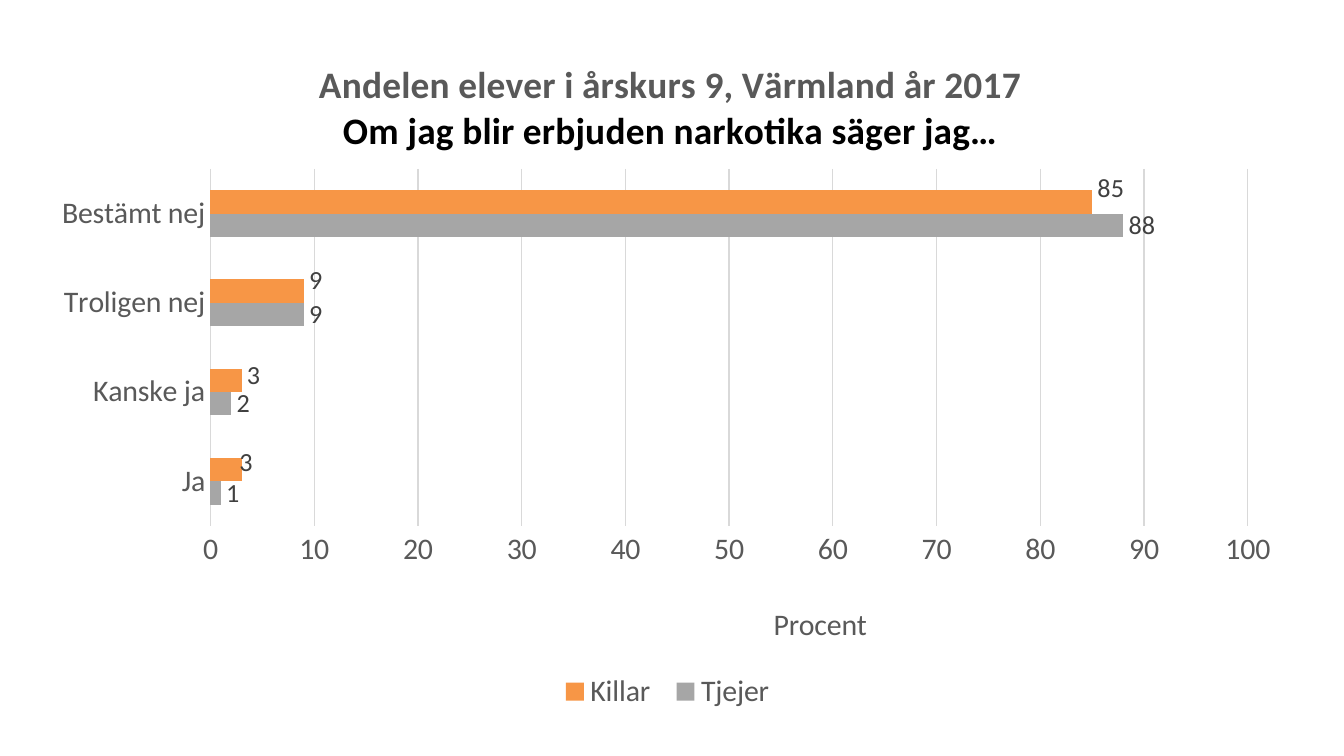
from lxml.etree import SubElement
from pptx import Presentation
from pptx.chart.data import CategoryChartData
from pptx.dml.color import RGBColor
from pptx.enum.chart import XL_CHART_TYPE, XL_LABEL_POSITION, XL_LEGEND_POSITION, XL_TICK_MARK
from pptx.oxml.ns import qn
from pptx.util import Emu, Pt

SCALE = 914400 / 134.4
FRAME = (38, 28, 1259, 688)
CATS = ["Ja", "Kanske ja", "Troligen nej", "Bestämt nej"]
ROWS = [("Tjejer", [1, 2, 9, 88], "A6A6A6"), ("Killar ", [3, 3, 9, 85], "F79646")]
SHIFTS = [(-8, -7), (0, -5), (0, -10), (0, -13)]
GREY, RULE, DARK = "595959", "D9D9D9", "404040"


def px(n):
    return Emu(round(n * SCALE))


def tint(code):
    return RGBColor.from_string(code)


def apply(item, values):
    for key, value in values.items():
        setattr(item, key, value)


def style(font, size, code, bold=False):
    apply(font, {"name": "Calibri", "size": Pt(size), "bold": bold})
    font.color.rgb = tint(code)


def rule(line):
    line.width = Pt(0.75)
    line.color.rgb = tint(RULE)


def place(node, index, **values):
    for old in node.findall(qn("c:layout")):
        node.remove(old)
    layout = SubElement(node, qn("c:layout"))
    node.insert(index, layout)
    manual = SubElement(layout, qn("c:manualLayout"))
    for key, value in values.items():
        SubElement(manual, qn("c:" + key)).set("val", str(value))


def write(title, lines, size, bold, x, y):
    frame = title.text_frame
    for i, (text, code) in enumerate(lines):
        para = frame.add_paragraph() if i else frame.paragraphs[0]
        run = para.add_run()
        run.text = text
        style(run.font, size, code, bold)
    place(title._element, 1, xMode="edge", yMode="edge", x=x, y=y)


def add_chart(slide):
    data = CategoryChartData(number_format="0")
    data.categories = CATS
    for name, vals, code in ROWS:
        data.add_series(name, vals)
    chart = slide.shapes.add_chart(
        XL_CHART_TYPE.BAR_CLUSTERED, *map(px, FRAME), data).chart
    style(chart.font, 12, "000000")
    return chart


def set_axes(chart):
    cat, val = chart.category_axis, chart.value_axis
    for axis in (cat, val):
        apply(axis, {"major_tick_mark": XL_TICK_MARK.NONE,
                     "minor_tick_mark": XL_TICK_MARK.NONE})
        style(axis.tick_labels.font, 16, GREY)
    apply(cat, {"has_major_gridlines": False})
    apply(val, {"minimum_scale": 0, "maximum_scale": 100, "major_unit": 10,
                "has_major_gridlines": True})
    apply(val.tick_labels, {"number_format": "0", "number_format_is_linked": False})
    rule(cat.format.line)
    rule(val.major_gridlines.format.line)
    val.format.line.fill.background()
    write(val.axis_title, [("Procent", GREY)], 16, False, 0.58, 0.83)


def set_bars(chart):
    plot = chart.plots[0]
    apply(plot, {"gap_width": 182, "overlap": 0, "vary_by_categories": False})
    for bars, (name, vals, code) in zip(plot.series, ROWS):
        bars.format.fill.solid()
        bars.format.fill.fore_color.rgb = tint(code)
        labels = bars.data_labels
        apply(labels, {"show_value": True, "number_format": "0",
                       "number_format_is_linked": False,
                       "position": XL_LABEL_POSITION.OUTSIDE_END})
        style(labels.font, 14, DARK)


def shift_labels(bars):
    for i, (x, y) in enumerate(SHIFTS):
        label = bars.points[i].data_label
        style(label.font, 14, DARK)
        label.position = XL_LABEL_POSITION.OUTSIDE_END
    for node, (x, y) in zip(bars._element.iter(qn("c:dLbl")), SHIFTS):
        place(node, 1, x=round(x / FRAME[2], 3), y=round(y / FRAME[3], 3))


def set_legend(chart):
    chart.has_legend = True
    apply(chart.legend, {"position": XL_LEGEND_POSITION.BOTTOM,
                         "include_in_layout": False})
    style(chart.legend.font, 16, GREY)


def main():
    deck = Presentation()
    apply(deck, {"slide_width": px(1344), "slide_height": px(756)})
    chart = add_chart(deck.slides.add_slide(deck.slide_layouts[6]))
    write(chart.chart_title,
          [("Andelen elever i årskurs 9, Värmland år 2017", GREY),
           ("Om jag blir erbjuden narkotika säger jag…", "000000")],
          20, True, 0.22, 0.04)
    set_axes(chart)
    set_bars(chart)
    shift_labels(chart.plots[0].series[1])
    set_legend(chart)
    area = chart._chartSpace.find(".//" + qn("c:plotArea"))
    place(area, 0, layoutTarget="inner", xMode="edge", yMode="edge",
          x=0.137, y=0.205, w=0.824, h=0.519)
    deck.save("out.pptx")


if __name__ == "__main__":
    main()
